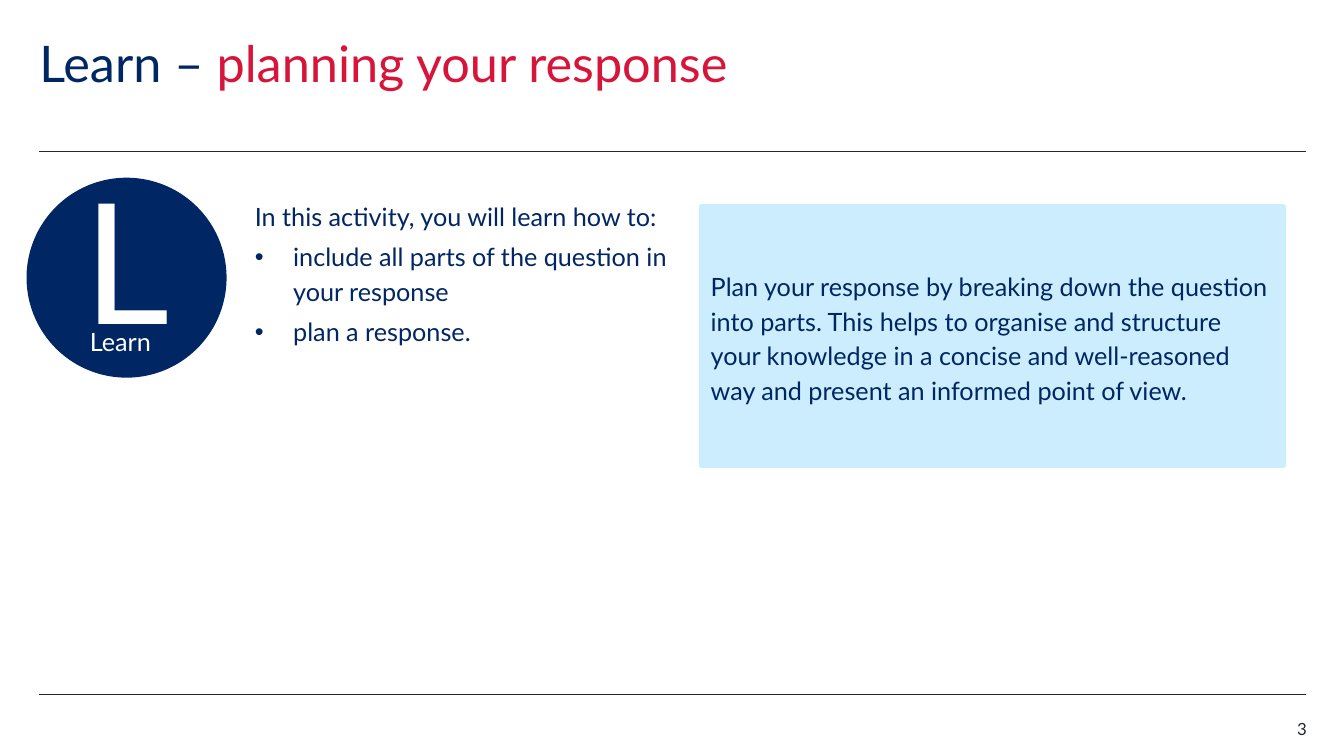
from dataclasses import dataclass

import pptx
import pptx.dml.color
import pptx.enum.shapes
import pptx.enum.text
import pptx.oxml
import pptx.oxml.ns
import pptx.util
from lxml import etree

RGBColor = pptx.dml.color.RGBColor
NAVY = RGBColor(0x00, 0x26, 0x64)
RED = RGBColor(0xD7, 0x15, 0x3A)
SKY = RGBColor(0xCB, 0xED, 0xFD)
INK = RGBColor(0x22, 0x27, 0x2B)
WHITE = RGBColor(0xFF, 0xFF, 0xFF)

FONT = "Lato"
WIDTH, HEIGHT = pptx.util.Inches(13.33), pptx.util.Inches(7.5)
LEFT, RIGHT = 2.93, 97.15  # margins, percent of slide width
INSET_X, INSET_Y = 0.1, 0.05  # inches
ALIGN = pptx.enum.text.PP_ALIGN
ANCHOR = pptx.enum.text.MSO_ANCHOR
SHAPE = pptx.enum.shapes.MSO_SHAPE


@dataclass
class Box:
    """Place as percentages of the slide's width and height."""
    left: float
    top: float
    width: float
    height: float

    def place(self) -> tuple:
        return (across(self.left), down(self.top),
                across(self.width), down(self.height))


@dataclass
class Para:
    runs: list  # (text, colour) pairs
    size: float = 18
    align: ALIGN = ALIGN.LEFT
    spacing: float = 1.0
    before: float = 0
    bullet: bool = False


@dataclass
class Label:
    box: Box
    paras: list
    insets: tuple = (0, 0, 0, 0)  # left, top, right, bottom in inches
    anchor: ANCHOR = ANCHOR.TOP


@dataclass
class Panel(Label):
    shape: SHAPE = SHAPE.RECTANGLE
    colour: RGBColor = NAVY
    line_width: float = 1


def across(share: float) -> int:
    return int(WIDTH * share / 100)


def down(share: float) -> int:
    return int(HEIGHT * share / 100)


def add_bullet(p) -> None:
    pPr = p._p.get_or_add_pPr()
    indent = pptx.util.Inches(0.38)
    pPr.set("marL", str(indent))
    pPr.set("indent", str(-indent))
    font = etree.SubElement(pPr, pptx.oxml.ns.qn("a:buFont"))
    font.set("typeface", "Arial")
    mark = etree.SubElement(pPr, pptx.oxml.ns.qn("a:buChar"))
    mark.set("char", "•")


def write(s, label: Label) -> None:
    tf = s.text_frame
    tf.word_wrap = True
    tf.vertical_anchor = label.anchor
    (tf.margin_left, tf.margin_top,
     tf.margin_right, tf.margin_bottom) = map(pptx.util.Inches, label.insets)
    for i, para in enumerate(label.paras):
        p = tf.add_paragraph() if i else tf.paragraphs[0]
        p.alignment = para.align
        p.line_spacing = para.spacing
        p.space_before = pptx.util.Pt(para.before)
        if para.bullet:
            add_bullet(p)
        for text, colour in para.runs:
            r = p.add_run()
            r.text = text
            r.font.name = FONT
            r.font.size = pptx.util.Pt(para.size)
            r.font.color.rgb = colour


def add_label(slide, label: Label) -> None:
    write(slide.shapes.add_textbox(*label.box.place()), label)


def add_panel(slide, panel: Panel) -> None:
    s = slide.shapes.add_shape(panel.shape, *panel.box.place())
    s.shadow.inherit = False
    s.fill.solid()
    s.fill.fore_color.rgb = panel.colour
    s.line.color.rgb = panel.colour
    s.line.width = pptx.util.Pt(panel.line_width)
    write(s, panel)


def add_rule(slide, height: float) -> None:
    rule = slide.shapes.add_connector(
        pptx.enum.shapes.MSO_CONNECTOR.STRAIGHT,
        across(LEFT), down(height), across(RIGHT), down(height))
    rule.line.color.rgb = INK
    rule.line.width = pptx.util.Pt(0.5)
    etree.SubElement(rule._element.spPr, pptx.oxml.ns.qn("a:effectLst"))


PADDED = (INSET_X, INSET_Y, INSET_X, INSET_Y)

TITLE = Label(Box(LEFT, 5.2, 82.67, 14.67), [
    Para([("Learn – ", NAVY), ("planning your response", RED)],
         size=36, spacing=0.9)])

# The deep bottom inset lifts the letter above its caption
BADGE = Panel(Box(2.03, 23.6, 14.78, 26.27),
              [Para([("L", WHITE)], size=120, align=ALIGN.CENTER)],
              insets=(INSET_X, INSET_Y, INSET_X, 0.45),
              anchor=ANCHOR.MIDDLE, shape=SHAPE.OVAL)
BADGE_CAPTION = Label(Box(6.68, 43.2, 5.48, 6.4), [Para([("Learn", WHITE)])])

GOALS = Label(Box(18.23, 25.33, 33.08, 21.07), [
    Para([("In this activity, you will learn how to:", NAVY)], spacing=1.15),
    *(Para([(goal, NAVY)], spacing=1.15, before=4, bullet=True)
      for goal in ("include all parts of the question in your response",
                   "plan a response."))], insets=PADDED)

ADVICE = Panel(Box(52.14, 27.33, 43.36, 34.27), [
    Para([("Plan your response by breaking down the question into parts. "
           "This helps to organise and structure your knowledge in a concise "
           "and well-reasoned way and present an informed point of view.",
           NAVY)], spacing=1.15)],
    insets=PADDED, anchor=ANCHOR.MIDDLE, colour=SKY, line_width=3)

PAGE_NUMBER = Label(Box(91.3, 95.07, 5.93, 2.67),
                    [Para([("3", INK)], size=12, align=ALIGN.RIGHT)])


def main() -> None:
    prs = pptx.Presentation()
    prs.slide_width, prs.slide_height = WIDTH, HEIGHT
    slide = prs.slides.add_slide(prs.slide_layouts[6])

    # Frame
    for height in (20, 91.87):
        add_rule(slide, height)
    add_label(slide, TITLE)

    # Content
    add_panel(slide, BADGE)
    add_label(slide, BADGE_CAPTION)
    add_label(slide, GOALS)
    add_panel(slide, ADVICE)

    # Footer
    add_label(slide, PAGE_NUMBER)
    prs.save("out.pptx")


if __name__ == "__main__":
    main()
